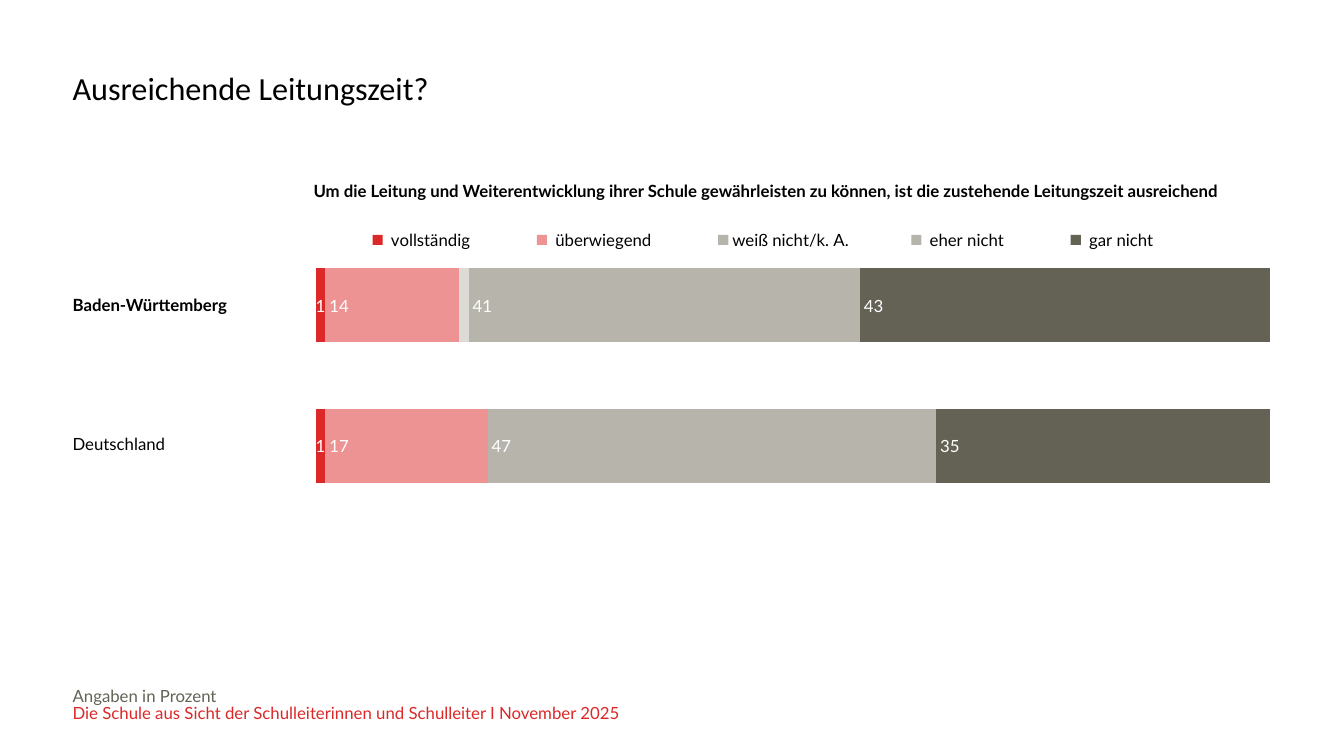
from dataclasses import dataclass

from lxml.etree import SubElement
from pptx import Presentation
from pptx.chart.data import CategoryChartData
from pptx.dml.color import RGBColor
from pptx.enum.chart import XL_CHART_TYPE, XL_LABEL_POSITION, XL_LEGEND_POSITION
from pptx.enum.text import MSO_ANCHOR, PP_ALIGN
from pptx.oxml.ns import qn
from pptx.util import Inches, Pt


@dataclass(frozen=True)
class Theme:
    title_font: str = "Calibri"
    body_font: str = "Lato"
    title_size: int = 23
    body_size: int = 12
    line_spacing: float = 0.85
    black: str = "000000"
    white: str = "FFFFFF"
    red: str = "DC2828"
    pink: str = "ED9393"
    pale: str = "DCDBD5"
    stone: str = "B7B5AB"
    olive: str = "636255"


THEME = Theme()
UNIT = Inches(0.1)  # one grid column or row
LEFT = 7.2
BAR_LEFT = 31.1
WIDE = 98.1

QUESTION = ("Um die Leitung und Weiterentwicklung ihrer Schule gewährleisten zu können, "
            "ist die zustehende Leitungszeit ausreichend")
REGIONS = ["Baden-Württemberg", "Deutschland"]
BASE, CENTER = XL_LABEL_POSITION.INSIDE_BASE, XL_LABEL_POSITION.CENTER
ANSWERS = [  # name, percent per region, colour, label position
    (" vollständig ", (1, 1), THEME.red, CENTER),
    (" überwiegend ", (14, 17), THEME.pink, BASE),
    ("weiß nicht/k. A.", (1, None), THEME.stone, None),
    (" eher nicht ", (41, 47), THEME.stone, BASE),
    (" gar nicht ", (43, 35), THEME.olive, BASE),
]


def grid(*cells):
    return [round(cell * UNIT) for cell in cells]


def style_font(font, color, size=THEME.body_size, name=THEME.body_font, bold=False):
    font.name, font.size, font.bold = name, Pt(size), bold
    font.color.rgb = RGBColor.from_string(color)


def write(paragraph, text, color=THEME.black, spacing=THEME.line_spacing, **font_format):
    paragraph.alignment = PP_ALIGN.LEFT
    paragraph.line_spacing = spacing
    run = paragraph.add_run()
    run.text = text
    style_font(run.font, color, **font_format)


def clear_margins(holder):
    holder.margin_left = holder.margin_right = holder.margin_top = holder.margin_bottom = 0


def fill_solid(fill, color):
    fill.solid()
    fill.fore_color.rgb = RGBColor.from_string(color)


def place_in_chart(element, before, inner=False, **shares):
    """Pin a chart part to shares of the chart's size, ahead of the first tag in before."""
    for old in element.findall(qn("c:layout")):
        element.remove(old)
    layout = SubElement(element, qn("c:layout"))
    follower = next(child for child in element if child.tag in map(qn, before))
    follower.addprevious(layout)
    manual = SubElement(layout, qn("c:manualLayout"))
    settings = {"layoutTarget": "inner"} if inner else {}
    settings.update(xMode="edge", yMode="edge", **shares)
    for tag, value in settings.items():
        SubElement(manual, qn(f"c:{tag}")).set("val", str(value))


class SurveySlide:
    def __init__(self, presentation, theme):
        self.theme = theme
        self.slide = presentation.slides.add_slide(presentation.slide_layouts[5])

    def title(self, text, *area):
        heading = self.slide.shapes.title
        heading.left, heading.top, heading.width, heading.height = grid(*area)
        frame = heading.text_frame
        clear_margins(frame)
        frame.vertical_anchor = MSO_ANCHOR.TOP
        write(frame.paragraphs[0], text, spacing=0.9,
              size=self.theme.title_size, name=self.theme.title_font)

    def footnote(self, lines, *area):
        frame = self.slide.shapes.add_textbox(*grid(*area)).text_frame
        frame.word_wrap = True
        clear_margins(frame)
        for index, (text, color) in enumerate(lines):
            paragraph = frame.add_paragraph() if index else frame.paragraphs[0]
            write(paragraph, text, color)

    def label_table(self, labels, columns, *area, anchor):
        """Unfilled table with labels in its first column, the first one bold."""
        table = self.slide.shapes.add_table(len(labels), len(columns), *grid(*area)).table
        table.first_row = table.horz_banding = False
        for column, width in zip(table.columns, grid(*columns)):
            column.width = width
        for cell in table.iter_cells():
            cell.fill.background()
            clear_margins(cell)
            cell.vertical_anchor = anchor
        for row, label in enumerate(labels):
            write(table.cell(row, 0).text_frame.paragraphs[0], label, bold=row == 0)

    def stacked_bars(self, categories, answers, *area):
        data = CategoryChartData(number_format="0")
        data.categories = categories
        for name, values, *_ in answers:
            data.add_series(name, values)
        chart = self.slide.shapes.add_chart(
            XL_CHART_TYPE.BAR_STACKED, *grid(*area), data).chart
        chart.has_title = False
        style_font(chart.font, self.theme.black)
        self.hide_axes(chart)
        bars = chart.plots[0]
        bars.gap_width, bars.overlap, bars.vary_by_categories = 90, 100, False
        for series, (_, _, color, position) in zip(bars.series, answers):
            fill_solid(series.format.fill, color)
            if position is not None:
                labels = series.data_labels
                labels.show_value, labels.position = True, position
                style_font(labels.font, self.theme.white)
        chart.has_legend = True
        chart.legend.position = XL_LEGEND_POSITION.TOP
        chart.legend.include_in_layout = False
        style_font(chart.legend.font, self.theme.black)
        plot_area = bars._element.getparent()
        place_in_chart(plot_area, ["c:barChart"], inner=True,
                       x=0.118, y=0.108, w=0.871, h=0.684)
        place_in_chart(chart.legend._element, ["c:overlay", "c:spPr", "c:txPr"],
                       x=0.118, y=0.085, w=0.82, h=0.07)
        return bars

    @staticmethod
    def hide_axes(chart):
        chart.category_axis.visible = chart.value_axis.visible = False
        chart.category_axis.reverse_order = True
        scale = chart.value_axis
        scale.has_major_gridlines = False
        scale.minimum_scale, scale.maximum_scale, scale.major_unit = 0, 100, 20


def main():
    presentation = Presentation()
    presentation.slide_width, presentation.slide_height = Inches(13.33), Inches(7.5)
    page = SurveySlide(presentation, THEME)
    page.title("Ausreichende Leitungszeit?", LEFT, 7.2, 122.1, 9.1)
    page.footnote([
        ("Angaben in Prozent", THEME.olive),
        ("Die Schule aus Sicht der Schulleiterinnen und Schulleiter I November 2025", THEME.red),
    ], LEFT, 68.3, WIDE, 4)
    page.label_table([QUESTION], [WIDE], BAR_LEFT, 17.7, WIDE, 2.2, anchor=MSO_ANCHOR.BOTTOM)
    bars = page.stacked_bars(["1", "2"], ANSWERS, 18.5, 18.9, 108.7, 40.8)
    fill_solid(bars.series[2].points[0].format.fill, THEME.pale)
    page.label_table(REGIONS, [15.9, 0.3, 7.8], LEFT, 23.5, 24, 27.6, anchor=MSO_ANCHOR.MIDDLE)
    presentation.save("out.pptx")


if __name__ == "__main__":
    main()
